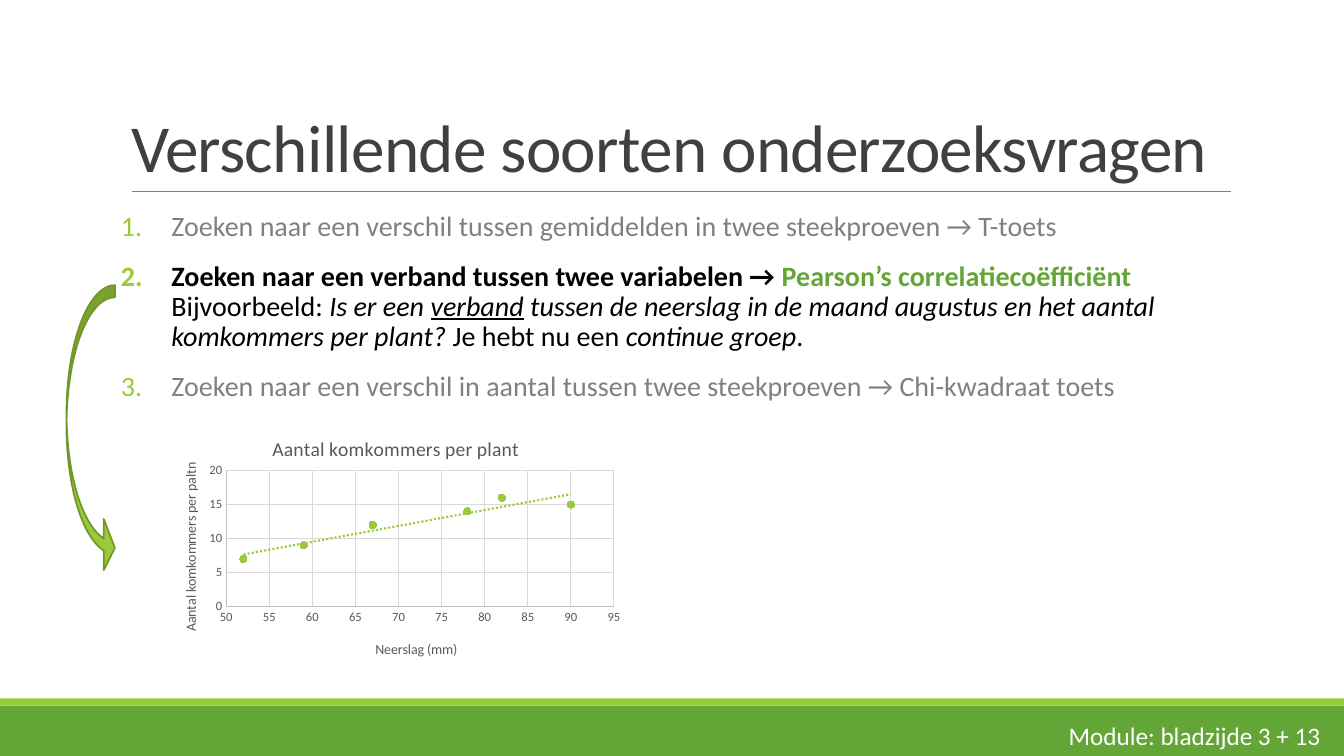
from lxml.etree import SubElement as Sub
from pptx import Presentation
from pptx.chart.data import XyChartData
from pptx.dml.color import RGBColor
from pptx.enum.chart import XL_CHART_TYPE as Kind, XL_MARKER_STYLE as Mark, XL_TICK_MARK as Tick
from pptx.enum.shapes import MSO_CONNECTOR as Link, MSO_SHAPE as Shape
from pptx.enum.text import MSO_ANCHOR as Anchor, MSO_AUTO_SIZE as Fit, PP_ALIGN as Align
from pptx.oxml import parse_xml
from pptx.oxml.ns import nsdecls, qn
from pptx.util import Inches, Pt

HUES = {
    "green": "63A537", "lime": "99CB38", "edge": "719629", "dark": "404040",
    "gray": "808080", "label": "595959", "axis": "BFBFBF", "grid": "D9D9D9",
    "black": "000000", "white": "FFFFFF",
}
FACE = "Calibri"

ITEMS = [
    [("Zoeken naar een verschil tussen gemiddelden in twee steekproeven → T-toets", "gray", "")],
    [
        ("Zoeken naar een verband tussen twee variabelen → ", "black", "b"),
        ("Pearson’s correlatiecoëfficiënt", "green", "b"),
        None,
        ("Bijvoorbeeld: ", "black", ""),
        ("Is er een ", "black", "i"),
        ("verband", "black", "iu"),
        (" tussen de neerslag in de maand augustus en het aantal komkommers per plant? ", "black", "i"),
        ("Je hebt nu een ", "black", ""),
        ("continue groep", "black", "i"),
        (".", "black", ""),
    ],
    [("Zoeken naar een verschil in aantal tussen twee steekproeven → Chi-kwadraat toets", "gray", "")],
]
POINTS = [(90, 15), (78, 14), (82, 16), (67, 12), (52, 7), (59, 9)]


def hue(name):
    """Return the named colour."""
    return RGBColor.from_string(HUES[name])


def style(font, size, color, marks=""):
    """Set face, size, colour and the b, i, u marks of a font."""
    font.name, font.size = FACE, Pt(size)
    font.color.rgb = hue(color)
    font.bold, font.italic, font.underline = (m in marks for m in "biu")


def place(item, box):
    """Move an item to a box given in inches."""
    item.left, item.top, item.width, item.height = map(Inches, box)


def block(slide, form, box, fill, edge=None):
    """Add a filled preset shape, with an edge if one is named."""
    item = slide.shapes.add_shape(form, *map(Inches, box))
    item.shadow.inherit = False
    item.fill.solid()
    item.fill.fore_color.rgb = hue(fill)
    if edge:
        item.line.color.rgb = hue(edge)
        item.line.width = Pt(1.25)
    else:
        item.line.fill.background()
    return item


def footer(slide, box):
    """Draw the two-tone band and its page reference."""
    x, y, w, h = box
    block(slide, Shape.RECTANGLE, (x, y + 0.07, w, h - 0.07), "green")
    block(slide, Shape.RECTANGLE, (x, y, w, 0.07), "lime")
    note = slide.shapes.add_textbox(*map(Inches, (x + w - 2.83, y + 0.17, 2.83, 0.4)))
    frame = note.text_frame
    frame.word_wrap = True
    frame.auto_size = Fit.SHAPE_TO_FIT_TEXT
    frame.text = "Module: bladzijde 3 + 13"
    style(frame.paragraphs[0].runs[0].font, 18, "white")


def heading(slide, box):
    """Fill the title and rule a line below it."""
    x, y, w, h = box
    title = slide.shapes.title
    place(title, box)
    frame = title.text_frame
    frame.text = "Verschillende soorten onderzoeksvragen"
    frame.vertical_anchor = Anchor.BOTTOM
    frame.auto_size = Fit.NONE
    para = frame.paragraphs[0]
    para.alignment, para.line_spacing = Align.LEFT, 0.85
    run = para.runs[0]
    style(run.font, 48, "dark")
    run.font._element.set("spc", "-50")
    ends = (x + 0.11, y + h, x + w + 0.01, y + h)
    rule = slide.shapes.add_connector(Link.STRAIGHT, *map(Inches, ends))
    rule.line.color.rgb = hue("gray")
    rule.line.width = Pt(0.5)
    Sub(rule._element.spPr, qn("a:effectLst"))


def number(para):
    """Give a paragraph a hanging lime number."""
    props = para._p.get_or_add_pPr()
    props.set("marL", str(Inches(0.5)))
    props.set("indent", str(Inches(-0.5)))
    Sub(Sub(props, qn("a:buClr")), qn("a:srgbClr"), val=HUES["lime"])
    Sub(props, qn("a:buFont"), typeface="+mj-lt")
    Sub(props, qn("a:buAutoNum"), type="arabicPeriod")


def listing(slide, box):
    """Fill the body with the numbered questions."""
    body = slide.placeholders[1]
    place(body, box)
    frame = body.text_frame
    frame.auto_size = Fit.NONE
    frame.margin_left = frame.margin_right = 0
    for i, parts in enumerate(ITEMS):
        para = frame.add_paragraph() if i else frame.paragraphs[0]
        para.line_spacing = 0.9 if i else 1.0
        para.space_before, para.space_after = Pt(12), Pt(2)
        number(para)
        for part in parts:
            if part is None:
                para.add_line_break()
                continue
            text, color, marks = part
            run = para.add_run()
            run.text = text
            style(run.font, 20, color, marks)


def pin(node, index, **spots):
    """Fix a chart part at fractions of the chart."""
    for old in node.findall(qn("c:layout")):
        node.remove(old)
    layout = parse_xml(f"<c:layout {nsdecls('c')}/>")
    node.insert(index, layout)
    manual = Sub(layout, qn("c:manualLayout"))
    if "w" in spots:
        Sub(manual, qn("c:layoutTarget"), val="inner")
    for key in "xy":
        Sub(manual, qn(f"c:{key}Mode"), val="edge")
    for key, value in spots.items():
        Sub(manual, qn(f"c:{key}"), val=str(value))


def label(title, text, size, x, y):
    """Write and pin a chart or axis title."""
    frame = title.text_frame
    frame.text = text
    style(frame.paragraphs[0].runs[0].font, size, "label")
    pin(title._element, 1, x=x, y=y)
    return frame


def scale(axis, low, high):
    """Set the range, grid and labels of an axis."""
    axis.minimum_scale, axis.maximum_scale, axis.major_unit = low, high, 5
    axis.major_tick_mark = axis.minor_tick_mark = Tick.NONE
    axis.has_major_gridlines = True
    style(axis.tick_labels.font, 9, "label")
    for line, color in ((axis.format.line, "axis"), (axis.major_gridlines.format.line, "grid")):
        line.color.rgb = hue(color)
        line.width = Pt(0.75)


def trend(series):
    """Add a dotted linear trend line to a series."""
    series._element.find(qn("c:xVal")).addprevious(parse_xml(
        f'<c:trendline {nsdecls("c", "a")}><c:spPr><a:ln w="{Pt(1.5)}"><a:solidFill>'
        f'<a:srgbClr val="{HUES["lime"]}"/></a:solidFill><a:prstDash val="sysDot"/></a:ln></c:spPr>'
        '<c:trendlineType val="linear"/><c:dispRSqr val="0"/><c:dispEq val="0"/></c:trendline>'))


def scatter(slide, box):
    """Plot cucumbers per plant against rainfall."""
    name = "Aantal komkommers per plant"
    data = XyChartData()
    dots = data.add_series(name)
    for x, y in POINTS:
        dots.add_data_point(x, y)
    chart = slide.shapes.add_chart(Kind.XY_SCATTER, *map(Inches, box), data).chart
    style(chart.font, 10, "black")
    chart.has_legend = False
    chart.has_title = True
    label(chart.chart_title, name, 14, 0.24, 0.07)
    across, up = chart.category_axis, chart.value_axis
    scale(across, 50, 95)
    scale(up, 0, 20)
    label(across.axis_title, "Neerslag (mm)", 10, 0.46, 0.86)
    side = label(up.axis_title, "Aantal komkommers per paltn", 10, 0.05, 0.18)
    side._txBody.bodyPr.set("rot", "-5400000")
    side._txBody.bodyPr.set("vert", "horz")
    plot = chart.plots[0]
    plot.vary_by_categories = False
    pin(chart._chartSpace.chart.plotArea, 0, x=0.15, y=0.22, w=0.82, h=0.52)
    series = plot.series[0]
    series.format.line.fill.background()
    mark = series.marker
    mark.style, mark.size = Mark.CIRCLE, 5
    mark.format.fill.solid()
    mark.format.fill.fore_color.rgb = hue("lime")
    mark.format.line.color.rgb = hue("lime")
    trend(series)


def arrow(slide, box):
    """Draw the curved arrow from question to chart."""
    bend = block(slide, Shape.CURVED_RIGHT_ARROW, box, "lime", "edge")
    for i, value in enumerate((0.25, 1.055, 0.23)):
        bend.adjustments[i] = value


def main():
    """Build and save the slide."""
    deck = Presentation()
    deck.slide_width, deck.slide_height = Inches(13.33), Inches(7.5)
    slide = deck.slides.add_slide(deck.slide_layouts[1])
    footer(slide, (0, 6.93, 13.33, 0.57))
    heading(slide, (1.2, 0.31, 11, 1.59))
    listing(slide, (1.2, 2.02, 11, 4.4))
    scatter(slide, (1.54, 4.1, 4.69, 2.59))
    arrow(slide, (0.66, 2.83, 0.48, 2.86))
    deck.save("out.pptx")


if __name__ == "__main__":
    main()
